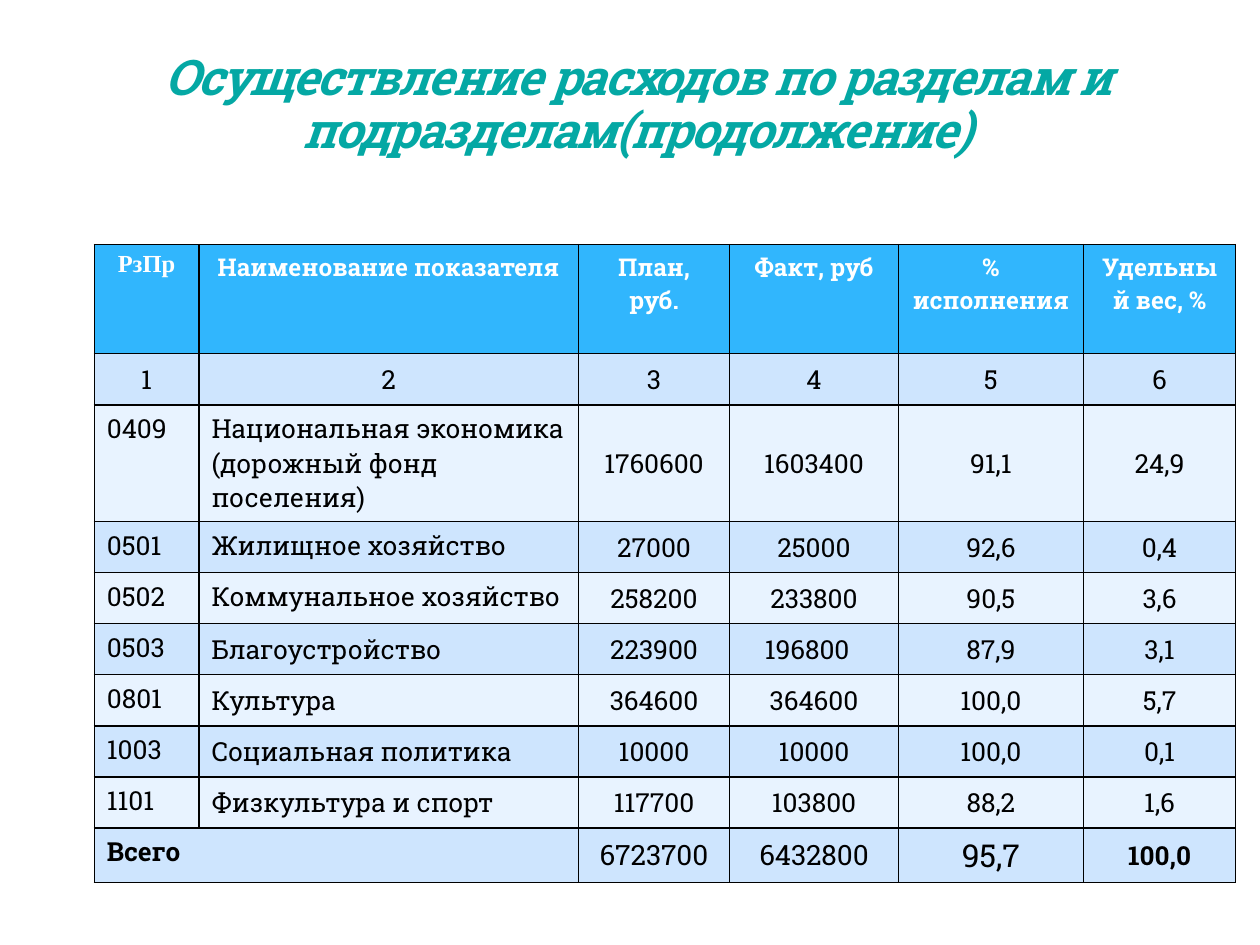
"""Build a slide with a table of budget spending by section and subsection."""
from lxml import etree
from pptx import Presentation
from pptx import util as u
from pptx.dml.color import RGBColor
from pptx.enum import text
from pptx.oxml import ns


def paint(target, color):
    """Give a fill a solid colour."""
    target.solid()
    target.fore_color.rgb = RGBColor.from_string(color)


def add_borders(cell, color, width):
    """Draw all four borders of a table cell."""
    properties = cell._tc.get_or_add_tcPr()
    for side in ("lnL", "lnR", "lnT", "lnB"):
        line = etree.SubElement(properties, ns.qn(f"a:{side}"), w=str(width))
        fill = etree.SubElement(line, ns.qn("a:solidFill"))
        etree.SubElement(fill, ns.qn("a:srgbClr"), val=color)


FONT = "Roboto Slab"
COLUMN_WIDTHS = [2.11, 7.65, 3.05, 3.4, 3.73, 3.07]
HEADER_HEIGHT, ROW_HEIGHT = 2.2, 1.03
ROWS = [
    ["РзПр", "Наименование показателя", "План, руб.", "Факт, руб", "% исполнения", "Удельный вес, %"],
    ["1", "2", "3", "4", "5", "6"],
    ["0409", "Национальная экономика (дорожный фонд поселения)", "1760600", "1603400", "91,1", "24,9"],
    ["0501", "Жилищное хозяйство", "27000", "25000", "92,6", "0,4"],
    ["0502", "Коммунальное хозяйство", "258200", "233800", "90,5", "3,6"],
    ["0503", "Благоустройство", "223900", "196800", "87,9", "3,1"],
    ["0801", "Культура", "364600", "364600", "100,0", "5,7"],
    ["1003", "Социальная политика", "10000", "10000", "100,0", "0,1"],
    ["1101", "Физкультура и спорт", "117700", "103800", "88,2", "1,6"],
    ["Всего", "", "6723700", "6432800", "95,7", "100,0"],
]
LAST = len(ROWS) - 1
TOTAL_SIZES = [15, 15, 16, 16, 18, 15]

presentation = Presentation()
presentation.slide_width, presentation.slide_height = u.Cm(25.4), u.Cm(19.05)
slide = presentation.slides.add_slide(presentation.slide_layouts[5])

title = slide.shapes.title
title.left, title.top, title.width, title.height = u.Cm(3.1), u.Cm(1.93), u.Cm(19.5), u.Cm(1.27)
frame = title.text_frame
frame.text = "Осуществление расходов по разделам и подразделам(продолжение)"
frame.word_wrap = True
frame.auto_size = text.MSO_AUTO_SIZE.NONE
frame.vertical_anchor = text.MSO_ANCHOR.BOTTOM
frame.margin_left = frame.margin_right = frame.margin_top = frame.margin_bottom = 0
paragraph = frame.paragraphs[0]
paragraph.alignment = text.PP_ALIGN.CENTER
paragraph.line_spacing = 0.9
run = paragraph.runs[0]
run.font.name, run.font.size = FONT, u.Pt(28)
run.font.bold = run.font.italic = True
paint(run.font.fill, "04A8A4")
run._r.get_or_add_rPr().set("spc", "-100")

table = slide.shapes.add_table(
    len(ROWS), len(COLUMN_WIDTHS), u.Cm(1.9), u.Cm(4.93),
    u.Cm(sum(COLUMN_WIDTHS)), u.Cm(HEADER_HEIGHT + LAST * ROW_HEIGHT),
).table
for column, width in zip(table.columns, COLUMN_WIDTHS):
    column.width = u.Cm(width)
for row in table.rows:
    row.height = u.Cm(ROW_HEIGHT)
table.rows[0].height = u.Cm(HEADER_HEIGHT)
table.cell(LAST, 0).merge(table.cell(LAST, 1))

for i, values in enumerate(ROWS):
    for j, value in enumerate(values):
        cell = table.cell(i, j)
        add_borders(cell, "000000", u.Pt(1))
        paint(cell.fill, "31B6FD" if i == 0 else "CEE5FE" if i % 2 else "E8F3FF")
        if cell.is_spanned:
            continue
        cell.text_frame.text = value
        middle = i == 1 or (i > 1 and j > 1) or (i > 4 and j == 1)
        cell.vertical_anchor = text.MSO_ANCHOR.MIDDLE if middle else text.MSO_ANCHOR.TOP
        paragraph = cell.text_frame.paragraphs[0]
        centered = i < 2 or j > 1
        paragraph.alignment = text.PP_ALIGN.CENTER if centered else text.PP_ALIGN.LEFT
        font = paragraph.runs[0].font
        font.name = FONT
        font.size = u.Pt(14 if i == 0 else TOTAL_SIZES[j] if i == LAST else 15)
        font.bold = i == 0 or (i == LAST and j in (0, 5))
        paint(font.fill, "FFFFFF" if i == 0 else "000000")

table.cell(0, 0).text_frame.paragraphs[0].runs[0].font.name = "Times New Roman"
table.cell(5, 3).margin_right = u.Cm(0.53)

presentation.save("out.pptx")
